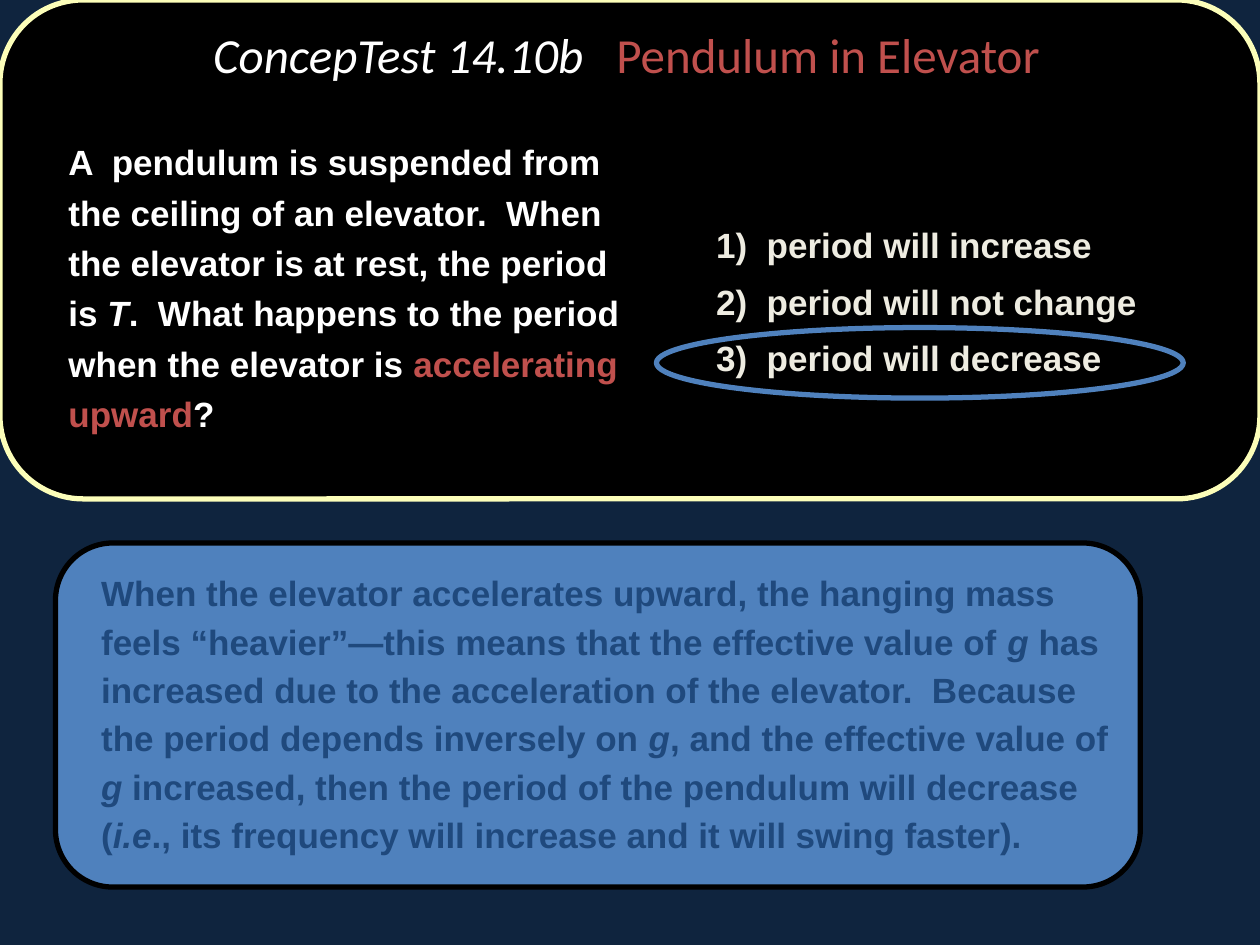
from lxml.etree import SubElement
from pptx import Presentation
from pptx.dml.color import RGBColor
from pptx.enum.shapes import MSO_SHAPE
from pptx.enum.text import MSO_ANCHOR, PP_ALIGN
from pptx.oxml.ns import qn
from pptx.util import Pt

NAVY, BLACK, WHITE, CREAM = "0F243E", "000000", "FFFFFF", "EEECE1"
BLUE, DARK_BLUE, RED, YELLOW = "4F81BD", "1F497D", "C0504D", "FCFEB9"
ITALIC = {"italic": True}


def rgb(color):
    """Turn a hex string into a colour."""
    return RGBColor.from_string(color)


def add_text(p, text, font="Arial", size=20, color=WHITE, bold=True, italic=False):
    """Add a formatted run to a paragraph."""
    r = p.add_run()
    r.text = text
    r.font.name, r.font.size = font, Pt(size)
    r.font.bold, r.font.italic = bold, italic
    r.font.color.rgb = rgb(color)


class SlideBuilder:
    """Hold the style and the current slide."""

    line_width = 3
    indent = 32

    def __init__(self, prs, background):
        """Start a title-only slide."""
        self.s = prs.slides.add_slide(prs.slide_layouts[5])
        fill = self.s.background.fill
        fill.solid()
        fill.fore_color.rgb = rgb(background)

    def shape(self, kind, box, line, fill=None):
        """Add an outlined shape, filled if a colour is given."""
        sp = self.s.shapes.add_shape(kind, *map(Pt, box))
        sp.shadow.inherit = False
        if fill:
            sp.fill.solid()
            sp.fill.fore_color.rgb = rgb(fill)
        else:
            sp.fill.background()
        sp.line.color.rgb = rgb(line)
        sp.line.width = Pt(self.line_width)

    def text(self, box, paragraphs, color, spacing):
        """Add a text box of hanging paragraphs made of (text, format) runs."""
        tf = self.s.shapes.add_textbox(*map(Pt, box)).text_frame
        tf.word_wrap = True
        for i, runs in enumerate(paragraphs):
            p = tf.add_paragraph() if i else tf.paragraphs[0]
            p.line_spacing = spacing
            p.space_before = Pt(6)
            pPr = p._p.get_or_add_pPr()
            pPr.set("marL", str(Pt(self.indent)))
            pPr.set("indent", str(Pt(-self.indent)))
            before = pPr.find(qn("a:spcBef"))
            before.clear()
            SubElement(before, qn("a:spcPct"), val="30000")
            for text, style in runs:
                add_text(p, text, **{"color": color, **style})

    def title(self, box, runs):
        """Place the title in front and fill it with runs."""
        sp = self.s.shapes.title
        sp.left, sp.top, sp.width, sp.height = map(Pt, box)
        sp.element.getparent().append(sp.element)
        tf = sp.text_frame
        tf.word_wrap = True
        tf.vertical_anchor = MSO_ANCHOR.MIDDLE
        p = tf.paragraphs[0]
        p.alignment = PP_ALIGN.CENTER
        p.line_spacing = 0.9
        for text, style in runs:
            add_text(p, text, font="Calibri", size=28, bold=False, **style)


def main():
    """Build and save the slide."""
    prs = Presentation()
    prs.slide_width, prs.slide_height = Pt(720), Pt(540)
    slide = SlideBuilder(prs, NAVY)

    slide.shape(MSO_SHAPE.ROUNDED_RECTANGLE, (31.7, 310.3, 619.9, 196.6), BLACK, BLUE)
    slide.shape(MSO_SHAPE.ROUNDED_RECTANGLE, (0, 0, 720, 285.1), YELLOW, BLACK)

    question = [
        ("\tA  pendulum is suspended from the ceiling of an elevator.  "
         "When the elevator is at rest, the period is ", {}),
        ("T", ITALIC),
        (".  What happens to the period when the elevator is ", {}),
        ("accelerating upward", {"color": RED}),
        ("?", {}),
    ]
    slide.text((0, 72, 366.5, 193.7), [question], WHITE, 1.2)

    outcomes = ["increase", "not change", "decrease"]
    answers = [[(f"\t{n})  period will {outcome}", {})]
               for n, outcome in enumerate(outcomes, 1)]
    slide.text((370.1, 121.7, 308.9, 120.2), answers, CREAM, 1.1)

    explanation = [
        ("\tWhen the elevator accelerates upward, the hanging mass feels "
         "“heavier”—this means that the effective value of ", {}),
        ("g", ITALIC),
        (" has increased due to the acceleration of the elevator.  "
         "Because the period depends inversely on ", {}),
        ("g", ITALIC),
        (", and the effective value of ", {}),
        ("g", ITALIC),
        (" increased, then the period of the pendulum will decrease (", {}),
        ("i.e", ITALIC),
        ("., its frequency will increase and it will swing faster).", {}),
    ]
    slide.text((18.7, 319.7, 624.2, 175), [explanation], DARK_BLUE, 1.15)

    slide.shape(MSO_SHAPE.OVAL, (375.1, 187.2, 301, 40.3), BLUE)
    slide.title((57.6, 0, 607, 66.2), [
        ("ConcepTest 14.10b   ", ITALIC),
        ("Pendulum in Elevator ", {"color": RED}),
    ])
    prs.save("out.pptx")


if __name__ == "__main__":
    main()
